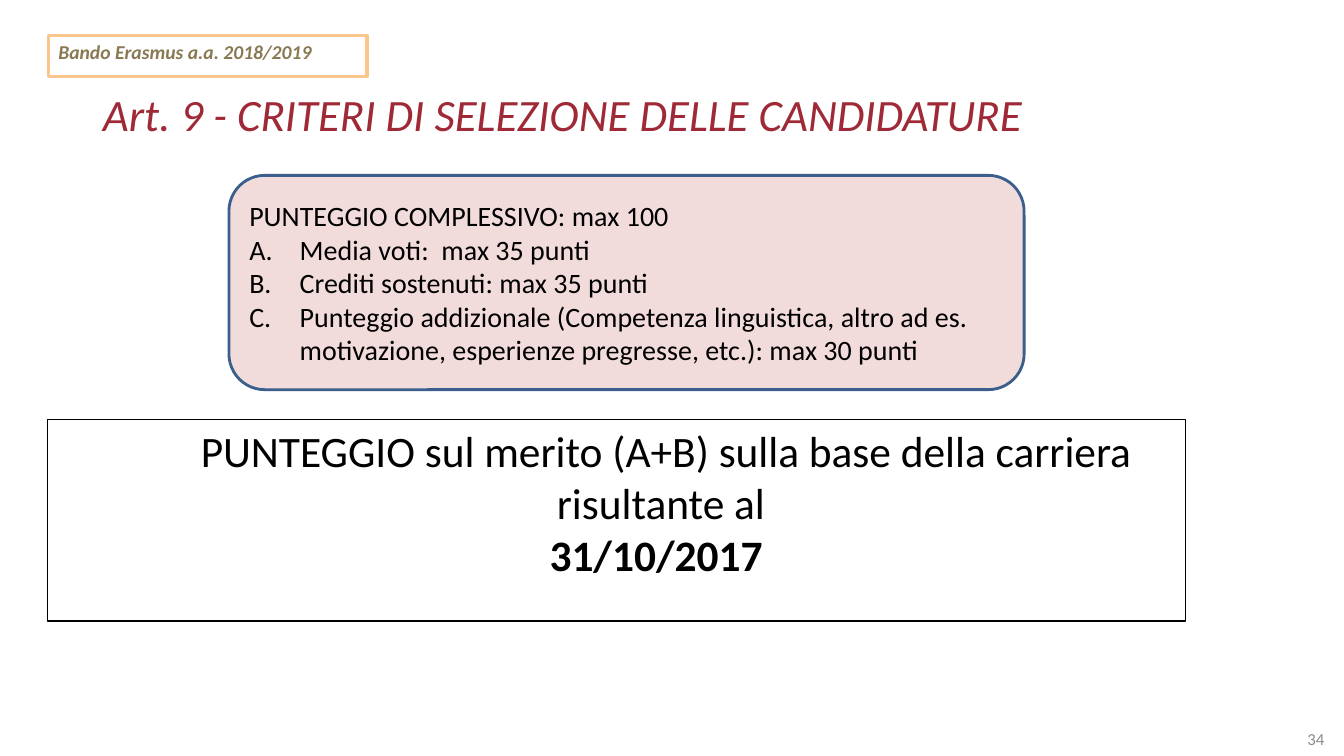
"""Build the slide on the selection criteria for Erasmus applications."""
import pptx
import pptx.util
import pptx.dml.color
import pptx.enum.shapes
import pptx.enum.text
import pptx.oxml.ns
import lxml.etree

Cm = pptx.util.Cm
ALIGN = pptx.enum.text.PP_ALIGN
ANCHOR = pptx.enum.text.MSO_ANCHOR
SHAPE = pptx.enum.shapes.MSO_SHAPE
COLORS = {"title": "9F2936", "text": "000000", "number": "8B8B8B",
          "panel": "F2DCDB", "panel_line": "3A5F8C",
          "tag": "887952", "tag_line": "FBC58E"}


def rgb(name):
    return pptx.dml.color.RGBColor.from_string(COLORS[name])


def write(sp, lines, size, color="text", bold=None, italic=None,
          align=ALIGN.LEFT, anchor=ANCHOR.TOP, left=0, hanging=0, lettered=False):
    tf = sp.text_frame
    tf.word_wrap = True
    tf.auto_size = pptx.enum.text.MSO_AUTO_SIZE.NONE
    tf.vertical_anchor = anchor
    for i, line in enumerate(lines):
        p = tf.paragraphs[0] if i == 0 else tf.add_paragraph()
        p.alignment = align
        if left and (i > 0 or not lettered):
            pPr = p._p.get_or_add_pPr()
            pPr.set("marL", str(Cm(left)))
            pPr.set("indent", str(Cm(-hanging)))
            if lettered:
                bullet = lxml.etree.SubElement(pPr, pptx.oxml.ns.qn("a:buAutoNum"))
                bullet.set("type", "alphaUcPeriod")
        r = p.add_run()
        r.text = line
        r.font.name = "Calibri"
        r.font.size = pptx.util.Pt(size)
        r.font.bold = bold
        r.font.italic = italic
        r.font.color.rgb = rgb(color)


prs = pptx.Presentation()
prs.slide_width, prs.slide_height = Cm(33.87), Cm(19.05)
s = prs.slides.add_slide(prs.slide_layouts[5])

title = s.shapes.title
title.left, title.top, title.width, title.height = Cm(2.34), Cm(1.02), Cm(29.2), Cm(3.68)
write(title, ["Art. 9 - CRITERI DI SELEZIONE DELLE CANDIDATURE"], 32,
      color="title", italic=True, anchor=ANCHOR.MIDDLE)

boxes = {}
for name, kind, box, fill, line, width in [
    ("merit", SHAPE.RECTANGLE, (1.2, 10.56, 28.67, 5.09), None, "text", 0.75),
    ("score", SHAPE.ROUNDED_RECTANGLE, (5.77, 4.42, 20.04, 5.4), "panel", "panel_line", 2),
    ("tag", SHAPE.RECTANGLE, (1.22, 0.89, 8.03, 1.05), None, "tag_line", 2.25),
]:
    sp = s.shapes.add_shape(kind, *map(Cm, box))
    sp.shadow.inherit = False
    if fill:
        sp.fill.solid()
        sp.fill.fore_color.rgb = rgb(fill)
    else:
        sp.fill.background()
    sp.line.color.rgb = rgb(line)
    sp.line.width = pptx.util.Pt(width)
    boxes[name] = sp

write(boxes["merit"], ["PUNTEGGIO sul merito (A+B) sulla base della carriera risultante al ",
                       "31/10/2017  "], 31, align=ALIGN.CENTER, left=2.49)
boxes["merit"].text_frame.paragraphs[1].runs[0].font.bold = True
write(boxes["score"], [
    "PUNTEGGIO COMPLESSIVO: max 100",
    "Media voti:  max 35 punti",
    "Crediti sostenuti: max 35 punti",
    "Punteggio addizionale (Competenza linguistica, altro ad es. motivazione, "
    "esperienze pregresse, etc.): max 30 punti",
], 20, anchor=ANCHOR.MIDDLE, left=1.27, hanging=1.27, lettered=True)
write(boxes["tag"], ["Bando Erasmus a.a. 2018/2019"], 14, color="tag", bold=True, italic=True)

number = s.shapes.add_textbox(Cm(32.39), Cm(18.21), Cm(1.24), Cm(0.84))
write(number, ["34"], 12, color="number", align=ALIGN.RIGHT, anchor=ANCHOR.MIDDLE)

prs.save("out.pptx")
